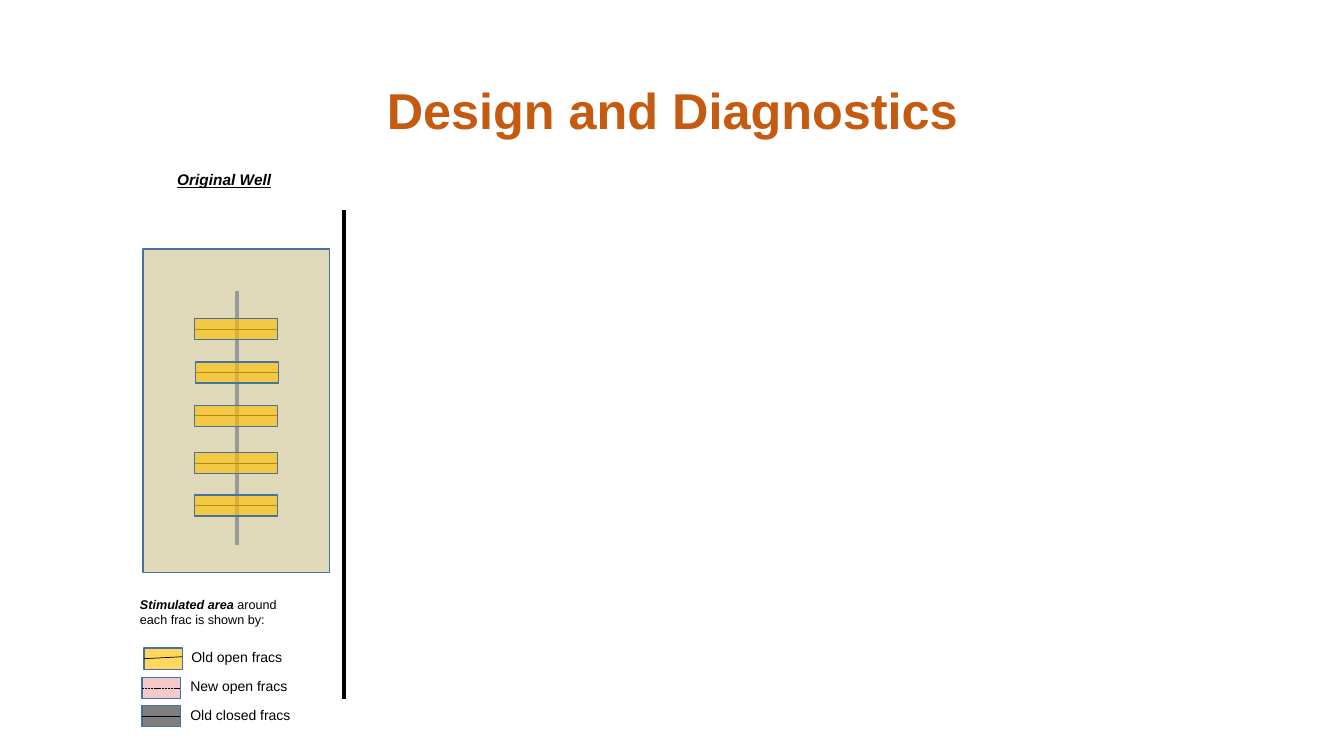
"""Build the Design and Diagnostics slide with its well diagram and legend."""
from dataclasses import dataclass, field
from typing import Any

from lxml import etree
from pptx import Presentation
from pptx import util as u
from pptx.dml.color import RGBColor
from pptx.enum import dml, shapes, text
from pptx.oxml.ns import qn

COLORS = {
    "title": "C55A11", "ink": "000000", "rock": "DFD8B9", "outline": "43739E",
    "well": "999999", "frac": "333333", "old": "FFC000", "new": "EDABB1",
}
LEFT_SIDE, RIGHT_SIDE = 1, 3
FRAC_HEIGHT = 0.21
FRAC_WIDTH = 0.82
SWATCH_WIDTH = 0.38


@dataclass
class Box:
    left: float
    top: float
    width: float
    height: float
    fill: str
    alpha: int = 100


@dataclass
class Line:
    x1: float
    y1: float
    x2: float
    y2: float
    color: str
    width: float


@dataclass
class Run:
    words: str
    format: dict[str, Any] = field(default_factory=dict)


@dataclass
class Label:
    left: float
    top: float
    width: float
    height: float
    size: float
    runs: list[Run]
    wrap: bool = False


@dataclass
class Swatch:
    left: float
    top: float
    fill: str
    words: str
    label_left: float
    label_top: float
    rise: float = 0
    dash: Any = None


FRACS = [Box(left, top, FRAC_WIDTH, FRAC_HEIGHT, "old", 63)
         for left, top in [(1.93, 3.16), (1.94, 3.59), (1.93, 4.02), (1.93, 4.49), (1.93, 4.91)]]
SWATCHES = [
    Swatch(1.43, 6.43, "old", "Old open fracs", 1.8, 6.38, rise=0.02),
    Swatch(1.41, 6.72, "new", "New open fracs", 1.79, 6.67, dash=dml.MSO_LINE.SQUARE_DOT),
    Swatch(1.41, 7.0, "frac", "Old closed fracs", 1.79, 6.96),
]
LABELS = [
    Label(1.66, 1.64, 1.14, 0.29, 11,
          [Run("Original Well", {"bold": True, "italic": True, "underline": True})]),
    Label(1.29, 5.87, 1.84, 0.4, 9,
          [Run("Stimulated area ", {"bold": True, "italic": True}),
           Run("around each frac is shown by:")], wrap=True),
]


def rgb(name: str) -> RGBColor:
    """Return the named colour."""
    return RGBColor.from_string(COLORS[name])


def set_all(target: Any, values: dict[str, Any]) -> None:
    """Set every attribute listed in values on target."""
    for name, value in values.items():
        setattr(target, name, value)


def add_run(p: Any, run: Run, size: float, color: str) -> None:
    """Append a formatted run to a paragraph."""
    r = p.add_run()
    r.text = run.words
    set_all(r.font, {"name": "Arial", "size": u.Pt(size), **run.format})
    r.font.color.rgb = rgb(color)


def add_box(s: Any, box: Box) -> Any:
    """Draw an outlined rectangle, see-through when alpha is below 100."""
    sp = s.shapes.add_shape(shapes.MSO_SHAPE.RECTANGLE, u.Inches(box.left), u.Inches(box.top),
                            u.Inches(box.width), u.Inches(box.height))
    sp.shadow.inherit = False
    sp.fill.solid()
    sp.fill.fore_color.rgb = rgb(box.fill)
    if box.alpha < 100:
        color = sp.fill._xPr.find(f".//{qn('a:srgbClr')}")
        etree.SubElement(color, qn("a:alpha"), val=str(box.alpha * 1000))
    sp.line.color.rgb = rgb("outline")
    sp.line.width = u.Pt(1)
    return sp


def add_line(s: Any, line: Line) -> Any:
    """Draw a straight line without a shadow."""
    sp = s.shapes.add_connector(shapes.MSO_CONNECTOR.STRAIGHT, u.Inches(line.x1),
                                u.Inches(line.y1), u.Inches(line.x2), u.Inches(line.y2))
    sp.line.color.rgb = rgb(line.color)
    sp.line.width = u.Pt(line.width)
    etree.SubElement(sp._element.spPr, qn("a:effectLst"))
    return sp


def add_label(s: Any, label: Label) -> None:
    """Add a text box made of formatted runs."""
    sp = s.shapes.add_textbox(u.Inches(label.left), u.Inches(label.top),
                              u.Inches(label.width), u.Inches(label.height))
    tf = sp.text_frame
    set_all(tf, {"word_wrap": label.wrap, "auto_size": text.MSO_AUTO_SIZE.SHAPE_TO_FIT_TEXT})
    for run in label.runs:
        add_run(tf.paragraphs[0], run, label.size, "ink")


def add_frac(s: Any, box: Box) -> None:
    """Draw a fracture line beneath its stimulated area."""
    middle = box.top + box.height / 2
    line = add_line(s, Line(box.left, middle, box.left + box.width, middle, "frac", 0.5))
    area = add_box(s, box)
    line.begin_connect(area, LEFT_SIDE)
    line.end_connect(area, RIGHT_SIDE)


def add_swatch(s: Any, swatch: Swatch) -> None:
    """Draw a legend swatch, its line and its label."""
    area = add_box(s, Box(swatch.left, swatch.top, SWATCH_WIDTH, FRAC_HEIGHT, swatch.fill, 63))
    middle = swatch.top + FRAC_HEIGHT / 2
    line = add_line(s, Line(swatch.left, middle, swatch.left + SWATCH_WIDTH,
                            middle - swatch.rise, "ink", 0.5))
    line.begin_connect(area, LEFT_SIDE)
    if not swatch.rise:
        line.end_connect(area, RIGHT_SIDE)
    if swatch.dash:
        line.line.dash_style = swatch.dash
    add_label(s, Label(swatch.label_left, swatch.label_top, 1.2, 0.27, 10, [Run(swatch.words)]))


def add_title(s: Any) -> None:
    """Place and format the slide title."""
    sp = s.shapes.title
    set_all(sp, {"left": u.Inches(0.92), "top": u.Inches(0.4),
                 "width": u.Inches(11.5), "height": u.Inches(1.45)})
    tf = sp.text_frame
    set_all(tf, {"word_wrap": True, "auto_size": text.MSO_AUTO_SIZE.NONE,
                 "vertical_anchor": text.MSO_ANCHOR.MIDDLE})
    p = tf.paragraphs[0]
    set_all(p, {"alignment": text.PP_ALIGN.CENTER, "line_spacing": 0.9})
    add_run(p, Run("Design and Diagnostics", {"bold": True}), 36, "title")


def main() -> None:
    """Build and save the presentation."""
    prs = Presentation()
    set_all(prs, {"slide_width": u.Inches(13.33), "slide_height": u.Inches(7.5)})
    s = prs.slides.add_slide(prs.slide_layouts.get_by_name("Title Only"))
    add_title(s)
    add_line(s, Line(3.41, 2.08, 3.41, 6.93, "ink", 3))
    add_box(s, Box(1.42, 2.47, 1.85, 3.21, "rock"))
    add_line(s, Line(2.35, 2.89, 2.35, 5.41, "well", 2.25))
    for frac in FRACS:
        add_frac(s, frac)
    for label in LABELS:
        add_label(s, label)
    for swatch in SWATCHES:
        add_swatch(s, swatch)
    prs.save("out.pptx")


if __name__ == "__main__":
    main()
